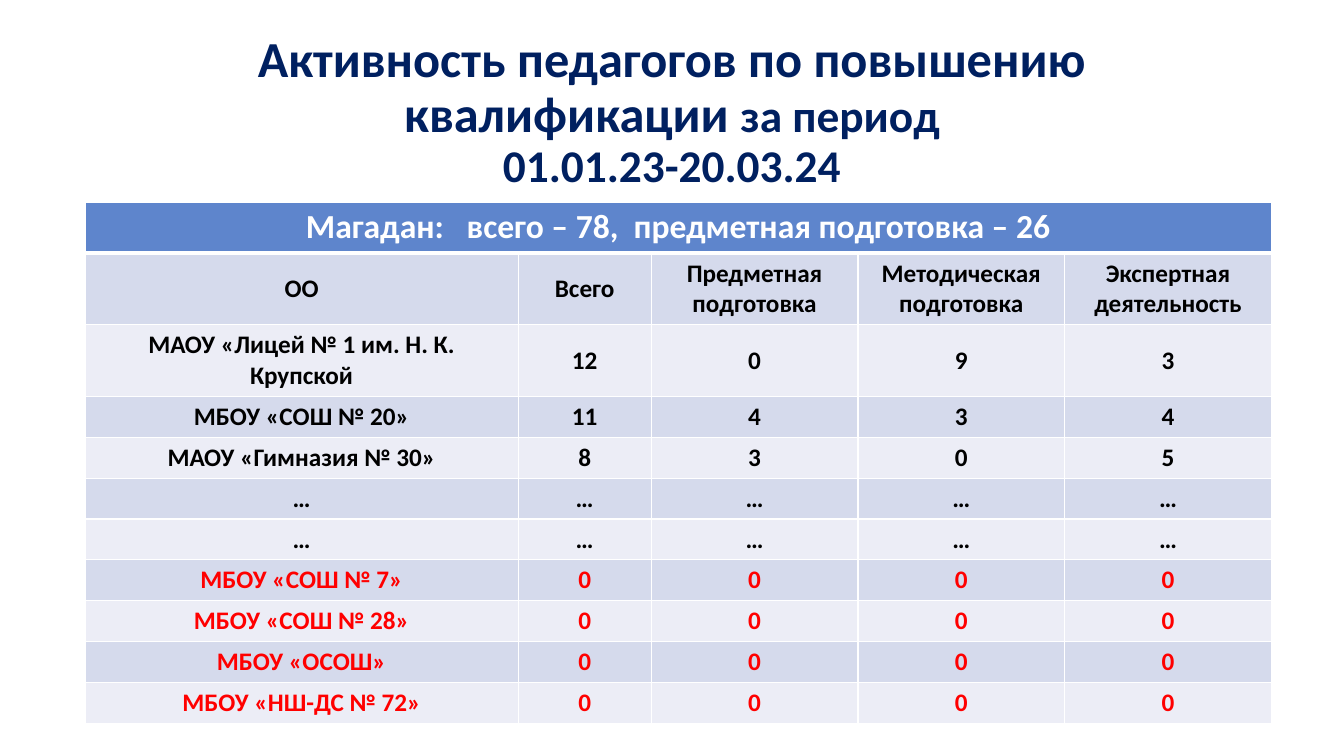
from lxml import etree
from pptx import Presentation
from pptx.dml.color import RGBColor
from pptx.enum import text
from pptx.oxml import ns
from pptx.util import Cm, Pt

# Content
TITLE = [
    ("Активность педагогов по повышению квалификации ", 36),
    ("за период\v01.01.23-20.03.24", 32.4),
]
SUMMARY = "Магадан:   всего – 78,  предметная подготовка – 26"
HEADINGS = ("ОО", "Всего", "Предметная подготовка",
            "Методическая подготовка", "Экспертная деятельность")
ACTIVE_SCHOOLS = [
    ("МАОУ «Лицей № 1 им. Н. К. Крупской", 12, 0, 9, 3),
    ("МБОУ «СОШ № 20»", 11, 4, 3, 4),
    ("МАОУ «Гимназия № 30»", 8, 3, 0, 5),
    ("…",) * 5,
    ("…",) * 5,
]
INACTIVE_SCHOOLS = ["МБОУ «СОШ № 7»", "МБОУ «СОШ № 28»", "МБОУ «ОСОШ»", "МБОУ «НШ-ДС № 72»"]

# Format
COLORS = {"title": "002060", "header": "4472C4", "band_dark": "CFD5EA", "band_light": "E9EBF5",
          "border": "FFFFFF", "summary": "FFFFFF", "body": "000000", "alert": "FF0000"}
FONT = "Calibri"
FILL_ALPHA = 86
COLUMN_WIDTHS = (10.92, 3.35, 5.21, 5.21, 5.21)
ROW_HEIGHT = 1.03


def add_run(paragraph, words, size, color):
    run = paragraph.add_run()
    run.text = words
    for name, value in {"name": FONT, "size": Pt(size), "bold": True}.items():
        setattr(run.font, name, value)
    run.font.color.rgb = RGBColor.from_string(COLORS[color])


def add_border(cell, side, width):
    line = etree.SubElement(cell._tc.get_or_add_tcPr(), ns.qn(f"a:ln{side}"), w=str(Pt(width)))
    solid = etree.SubElement(line, ns.qn("a:solidFill"))
    etree.SubElement(solid, ns.qn("a:srgbClr"), val=COLORS["border"])


def fill_cell(cell, color):
    cell.fill.solid()
    cell.fill.fore_color.rgb = RGBColor.from_string(COLORS[color])
    shade = cell._tc.tcPr.find(".//" + ns.qn("a:solidFill") + "[last()]")
    shade = cell._tc.tcPr.find(ns.qn("a:solidFill") + "/" + ns.qn("a:srgbClr"))
    etree.SubElement(shade, ns.qn("a:alpha"), val=str(FILL_ALPHA * 1000))


def write_cell(cell, words, size, color):
    paragraph = cell.text_frame.paragraphs[0]
    paragraph.alignment = text.PP_ALIGN.CENTER
    add_run(paragraph, words, size, color)


def main():
    presentation = Presentation()
    presentation.slide_width, presentation.slide_height = Cm(33.87), Cm(19.05)
    slide = presentation.slides.add_slide(presentation.slide_layouts[5])

    # Title
    title = slide.shapes.title
    title.left, title.top, title.width, title.height = Cm(2.33), Cm(1.01), Cm(29.21), Cm(3.68)
    frame = title.text_frame
    for name, value in {"word_wrap": True, "auto_size": text.MSO_AUTO_SIZE.NONE,
                        "vertical_anchor": text.MSO_ANCHOR.MIDDLE}.items():
        setattr(frame, name, value)
    paragraph = frame.paragraphs[0]
    paragraph.alignment = text.PP_ALIGN.CENTER
    paragraph.line_spacing = 0.9
    for words, size in TITLE:
        first, *rest = words.split("\v")
        add_run(paragraph, first, size, "title")
        for line in rest:
            paragraph.add_line_break()
            add_run(paragraph, line, size, "title")

    # Table grid
    rows = [(HEADINGS, "body")]
    rows += [(school, "body") for school in ACTIVE_SCHOOLS]
    rows += [((school, 0, 0, 0, 0), "alert") for school in INACTIVE_SCHOOLS]
    row_count = len(rows) + 1
    table = slide.shapes.add_table(
        row_count, len(COLUMN_WIDTHS), Cm(2.14), Cm(5.09),
        Cm(sum(COLUMN_WIDTHS)), Cm(ROW_HEIGHT * row_count)).table
    for column, width in zip(table.columns, COLUMN_WIDTHS):
        column.width = Cm(width)

    # Borders and alternating fills, with a thick line under the summary row
    for index, row in enumerate(table.rows):
        row.height = Cm(ROW_HEIGHT)
        fill = "header" if index == 0 else "band_dark" if index % 2 else "band_light"
        widths = {"L": 1, "R": 1, "T": 3 if index == 1 else 1, "B": 3 if index == 0 else 1}
        for cell in row.cells:
            for side, width in widths.items():
                add_border(cell, side, width)
            fill_cell(cell, fill)

    # Table text
    table.cell(0, 0).merge(table.cell(0, len(COLUMN_WIDTHS) - 1))
    write_cell(table.cell(0, 0), SUMMARY, 24, "summary")
    for row_index, (values, color) in enumerate(rows, start=1):
        for column_index, value in enumerate(values):
            cell = table.cell(row_index, column_index)
            cell.vertical_anchor = text.MSO_ANCHOR.MIDDLE
            write_cell(cell, str(value), 18, color)

    presentation.save("out.pptx")


if __name__ == "__main__":
    main()
